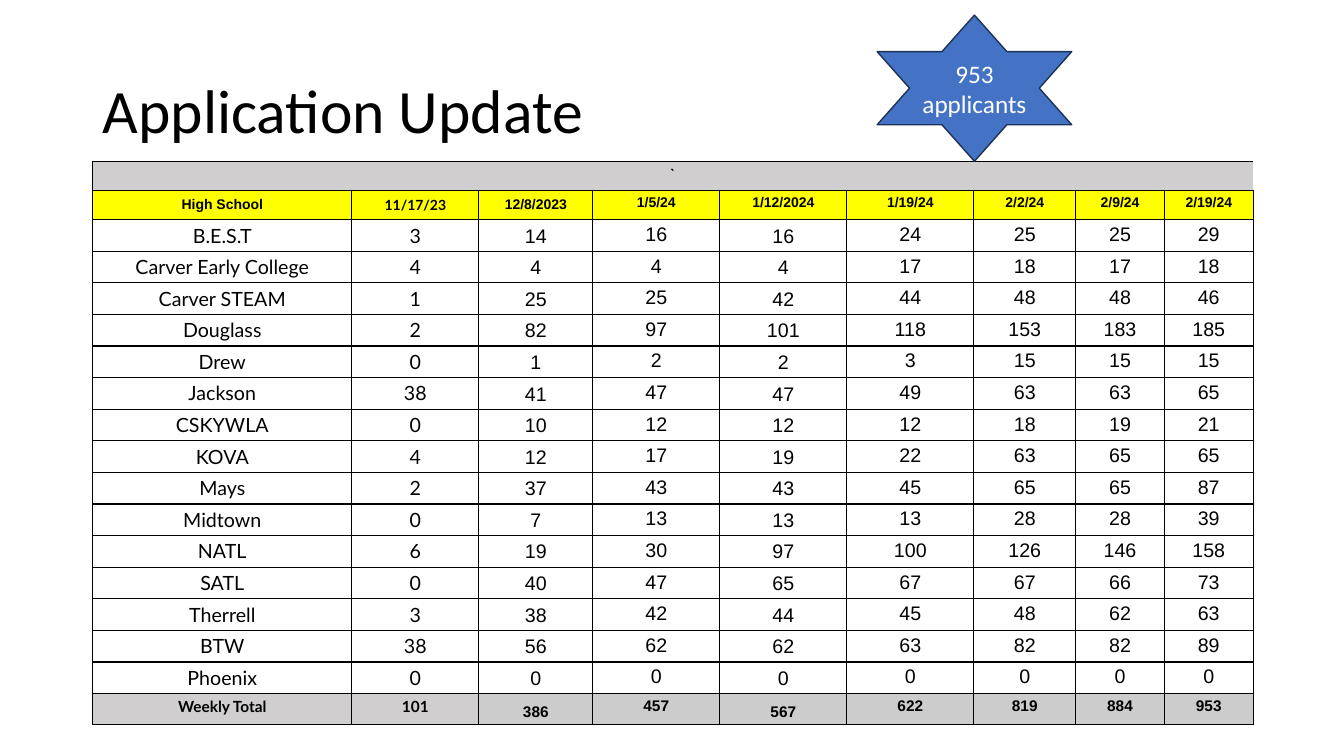
from lxml import etree
from pptx import Presentation
from pptx import util as u
from pptx.dml.color import RGBColor
from pptx.enum import shapes, text
from pptx.oxml.ns import qn

TITLE = "Application Update"
BADGE = "953 applicants"
BANNER = "`"
HEADER = ["High School", "11/17/23", "12/8/2023", "1/5/24", "1/12/2024",
          "1/19/24", "2/2/24", "2/9/24", "2/19/24"]
SCHOOLS = [
    ("B.E.S.T", 3, 14, 16, 16, 24, 25, 25, 29),
    ("Carver Early College", 4, 4, 4, 4, 17, 18, 17, 18),
    ("Carver STEAM", 1, 25, 25, 42, 44, 48, 48, 46),
    ("Douglass", 2, 82, 97, 101, 118, 153, 183, 185),
    ("Drew", 0, 1, 2, 2, 3, 15, 15, 15),
    ("Jackson", 38, 41, 47, 47, 49, 63, 63, 65),
    ("CSKYWLA", 0, 10, 12, 12, 12, 18, 19, 21),
    ("KOVA", 4, 12, 17, 19, 22, 63, 65, 65),
    ("Mays", 2, 37, 43, 43, 45, 65, 65, 87),
    ("Midtown", 0, 7, 13, 13, 13, 28, 28, 39),
    ("NATL", 6, 19, 30, 97, 100, 126, 146, 158),
    ("SATL", 0, 40, 47, 65, 67, 67, 66, 73),
    ("Therrell", 3, 38, 42, 44, 45, 48, 62, 63),
    ("BTW", 38, 56, 62, 62, 63, 82, 82, 89),
    ("Phoenix", 0, 0, 0, 0, 0, 0, 0, 0),
]
TOTALS = ("Weekly Total", 101, 386, 457, 567, 622, 819, 884, 953)
ROWS = [[BANNER] + [""] * 8, HEADER, *SCHOOLS, TOTALS]
LAST = len(ROWS) - 1
COLUMN_WIDTHS = [2.57, 1.26, 1.13, 1.26, 1.26, 1.26, 1.01, 0.88, 0.88]
ROW_HEIGHTS = [0.29, 0.29] + [0.31] * (LAST - 1)
LEFT, WIDTH = 0.92, 11.5
BOTTOM_COLUMNS = (2, 4)


def color(value):
    return RGBColor.from_string(value)


def box(left, top, width, height):
    return [u.Inches(value) for value in (left, top, width, height)]


def style(paragraph, font_name, size, font_color, bold=False):
    font = paragraph.font
    font.name, font.size, font.bold = font_name, u.Pt(size), bold
    font.color.rgb = color(font_color)


def add_borders(cell, sides):
    properties = cell._tc.get_or_add_tcPr()
    for side in sides:
        line = etree.SubElement(properties, qn(f"a:ln{side}"), w=str(u.Pt(1)))
        fill = etree.SubElement(line, qn("a:solidFill"))
        etree.SubElement(fill, qn("a:srgbClr"), val="000000")


def cell_fill(row, column):
    if row == 1:
        return "FFFF00"
    if row == 0 or (row == LAST and column < 2):
        return "D0CECE"
    return "CCCCCC" if row == LAST else None


def cell_anchor(row, column):
    if row == 1 and column < 3:
        return text.MSO_ANCHOR.MIDDLE
    if row > 1 and column in BOTTOM_COLUMNS:
        return text.MSO_ANCHOR.BOTTOM
    return text.MSO_ANCHOR.TOP


def format_cell(cell, row, column):
    sides = "LRTB" if row else "LTB" if column == 0 else "TB"
    add_borders(cell, sides)
    fill = cell_fill(row, column)
    if fill:
        cell.fill.solid()
        cell.fill.fore_color.rgb = color(fill)
    else:
        cell.fill.background()
    cell.vertical_anchor = cell_anchor(row, column)
    cell.margin_left = cell.margin_right = u.Inches(0.06 if column < 3 else 0.08)
    cell.margin_top = cell.margin_bottom = u.Inches(0.04)
    cell.text = str(ROWS[row][column])
    paragraph = cell.text_frame.paragraphs[0]
    paragraph.alignment = text.PP_ALIGN.CENTER
    lato = column < 2 and (row, column) != (1, 0)
    size = 10 if row < 2 else 11 if row == LAST else 14
    style(paragraph, "Lato" if lato else "Arial", size, "000000",
          row < 2 or row == LAST)


def add_title(slide):
    title = slide.shapes.title
    title.left, title.top, title.width, title.height = box(LEFT, 0.4, WIDTH, 1.45)
    title.text_frame.text = TITLE
    title.text_frame.vertical_anchor = text.MSO_ANCHOR.MIDDLE
    paragraph = title.text_frame.paragraphs[0]
    paragraph.alignment = text.PP_ALIGN.LEFT
    paragraph.line_spacing = 0.9
    style(paragraph, "Calibri", 44, "000000")


def add_applications(slide):
    frame = slide.shapes.add_table(
        len(ROWS), len(HEADER), *box(LEFT, 1.6, WIDTH, sum(ROW_HEIGHTS)))
    table = frame.table
    table.first_row = table.horz_banding = False
    for column, width in zip(table.columns, COLUMN_WIDTHS):
        column.width = u.Inches(width)
    for row, height in zip(table.rows, ROW_HEIGHTS):
        row.height = u.Inches(height)
    for row in range(len(ROWS)):
        for column in range(len(HEADER)):
            format_cell(table.cell(row, column), row, column)
    table.cell(0, 0).merge(table.cell(0, len(HEADER) - 1))


def add_badge(slide):
    star = slide.shapes.add_shape(
        shapes.MSO_SHAPE.STAR_6_POINT, *box(8.7, 0.15, 1.93, 1.45))
    star.shadow.inherit = False
    star.fill.solid()
    star.fill.fore_color.rgb = color("4472C4")
    star.line.color.rgb = color("1E3256")
    star.line.width = u.Pt(1)
    star.text_frame.text = BADGE
    star.text_frame.word_wrap = True
    star.text_frame.vertical_anchor = text.MSO_ANCHOR.MIDDLE
    paragraph = star.text_frame.paragraphs[0]
    paragraph.alignment = text.PP_ALIGN.CENTER
    style(paragraph, "Calibri", 18, "FFFFFF")


def main():
    presentation = Presentation()
    presentation.slide_width = u.Inches(13.33)
    presentation.slide_height = u.Inches(7.5)
    slide = presentation.slides.add_slide(presentation.slide_layouts[5])
    add_title(slide)
    add_applications(slide)
    add_badge(slide)
    presentation.save("out.pptx")


if __name__ == "__main__":
    main()
